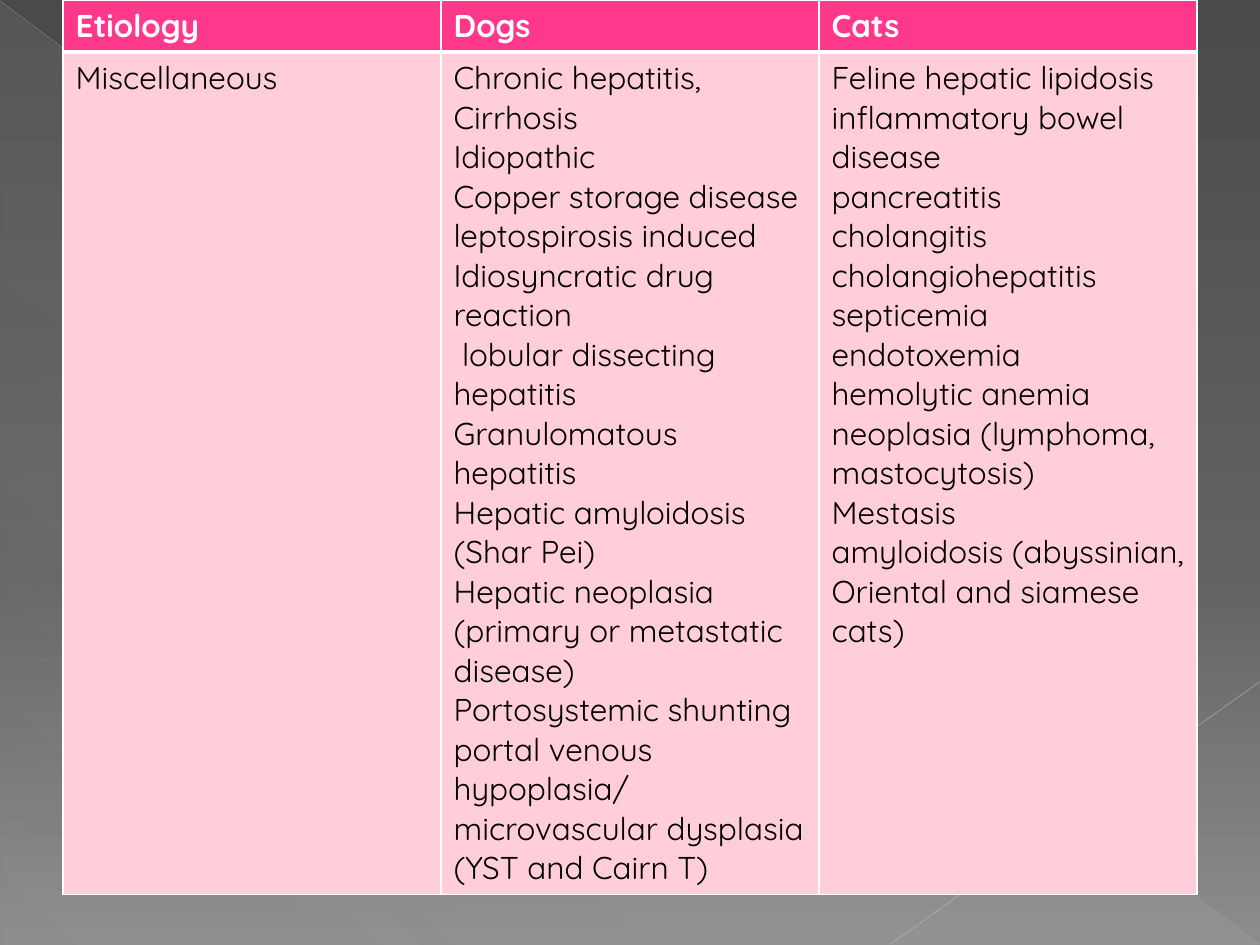
import pptx
import pptx.dml.color
import pptx.enum.shapes
import pptx.oxml
import pptx.oxml.ns
import pptx.util
from lxml import etree

Pt = pptx.util.Pt
RGBColor = pptx.dml.color.RGBColor
qn = pptx.oxml.ns.qn

WHITE = RGBColor(0xFF, 0xFF, 0xFF)
BLACK = RGBColor(0, 0, 0)
PINK = RGBColor(0xFF, 0x38, 0x8C)
PALE_PINK = RGBColor(0xFF, 0xCE, 0xDA)
DARK_GREY = RGBColor(0x4A, 0x4A, 0x4A)
MID_GREY = RGBColor(0x62, 0x62, 0x62)
LIGHT_GREY = RGBColor(0x8C, 0x8C, 0x8C)
SHEEN = RGBColor(0xD2, 0xD2, 0xD2)
DIAGONAL = RGBColor(0xBF, 0xBF, 0xBF)
CORNER = RGBColor(0xC6, 0xC6, 0xC6)

FONT = "Quicksand"
HEADINGS = ["Etiology", "Dogs", "Cats"]
CAUSES = [
    ["Miscellaneous"],
    [
        "Chronic hepatitis, Cirrhosis",
        "Idiopathic",
        "Copper storage disease",
        "leptospirosis induced",
        "Idiosyncratic drug reaction",
        " lobular dissecting hepatitis",
        "Granulomatous hepatitis",
        "Hepatic amyloidosis (Shar Pei)",
        "Hepatic neoplasia (primary or metastatic disease)",
        "Portosystemic shunting",
        "portal venous hypoplasia/ microvascular dysplasia (YST and Cairn T)",
    ],
    [
        "Feline hepatic lipidosis",
        "inflammatory bowel disease",
        "pancreatitis",
        "cholangitis",
        "cholangiohepatitis",
        "septicemia",
        "endotoxemia",
        "hemolytic anemia",
        "neoplasia (lymphoma, mastocytosis)",
        "Mestasis",
        "amyloidosis (abyssinian, Oriental and siamese cats)",
    ],
]


def add_color(parent, color, opacity=100):
    element = etree.SubElement(parent, qn("a:srgbClr"), val=str(color))
    if opacity < 100:
        etree.SubElement(element, qn("a:alpha"), val=str(opacity * 1000))


def set_gradient(fill, owner, stops, angle):
    fill.gradient()
    gradient = next(owner.iter(qn("a:gradFill")))
    stop_list = gradient.find(qn("a:gsLst"))
    for stop in list(stop_list):
        stop_list.remove(stop)
    for position, color, opacity in stops:
        stop = etree.SubElement(stop_list, qn("a:gs"), pos=str(position * 1000))
        add_color(stop, color, opacity)
    gradient.find(qn("a:lin")).set("ang", str(angle * 60000))


def add_line(slide, start, end, color, width, opacity):
    connector = slide.shapes.add_connector(
        pptx.enum.shapes.MSO_CONNECTOR.STRAIGHT, *map(Pt, start + end))
    connector.line.width = Pt(width)
    connector.line.color.rgb = color
    color_element = next(connector.line._get_or_add_ln().iter(qn("a:srgbClr")))
    etree.SubElement(color_element, qn("a:alpha"), val=str(opacity * 1000))
    etree.SubElement(connector._element.spPr, qn("a:effectLst"))


def add_backdrop(slide, left, top, width, height):
    set_gradient(
        slide.background.fill, slide._element,
        [(0, DARK_GREY, 100), (60, MID_GREY, 100), (100, LIGHT_GREY, 100)], 90)
    triangle = slide.shapes.add_shape(
        pptx.enum.shapes.MSO_SHAPE.RIGHT_TRIANGLE,
        Pt(left + 0.5), Pt(top + 1), Pt(width - 1), Pt(height - 1))
    triangle.shadow.inherit = False
    triangle.line.fill.background()
    set_gradient(triangle.fill, triangle._element.spPr,
                 [(0, SHEEN, 10), (70, SHEEN, 8), (100, SHEEN, 1)], 133)
    right, bottom = left + width, top + height - 0.5
    add_line(slide, (left, top + 0.5), (right - 0.5, bottom), DIAGONAL, 0.39, 35)
    add_line(slide, (right, bottom - 150), (right - 211, bottom), CORNER, 0.47, 45)


def set_borders(cell, widths):
    properties = cell._tc.get_or_add_tcPr()
    for side, width in zip("LRTB", widths):
        line = etree.SubElement(properties, qn(f"a:ln{side}"), w=str(Pt(width)))
        add_color(etree.SubElement(line, qn("a:solidFill")), WHITE)


def fill_cell(cell, lines, fill_color, text_color, bold, borders):
    set_borders(cell, borders)
    cell.fill.solid()
    cell.fill.fore_color.rgb = fill_color
    frame = cell.text_frame
    for index, text in enumerate(lines):
        paragraph = frame.add_paragraph() if index else frame.paragraphs[0]
        run = paragraph.add_run()
        run.text = text
        run.font.name = FONT
        run.font.size = Pt(18)
        run.font.bold = bold
        run.font.color.rgb = text_color


def add_causes_table(slide, left, top, width, height):
    header_height = 29.5
    table = slide.shapes.add_table(
        2, len(HEADINGS), Pt(left), Pt(top), Pt(width), Pt(height)).table
    table.rows[0].height = Pt(header_height)
    table.rows[1].height = Pt(height - header_height)
    for index, (heading, causes) in enumerate(zip(HEADINGS, CAUSES)):
        table.columns[index].width = Pt(width / len(HEADINGS))
        fill_cell(table.cell(0, index), [heading], PINK, WHITE, True, (1, 1, 1, 3))
        fill_cell(table.cell(1, index), causes, PALE_PINK, BLACK, False, (1, 1, 3, 1))


def main():
    presentation = pptx.Presentation()
    presentation.slide_width = Pt(720)
    presentation.slide_height = Pt(540)
    slide = presentation.slides.add_slide(presentation.slide_layouts[6])
    add_backdrop(slide, 0, 0, 720, 540)
    add_causes_table(slide, 36, 0, 648, 511)
    presentation.save("out.pptx")


if __name__ == "__main__":
    main()
